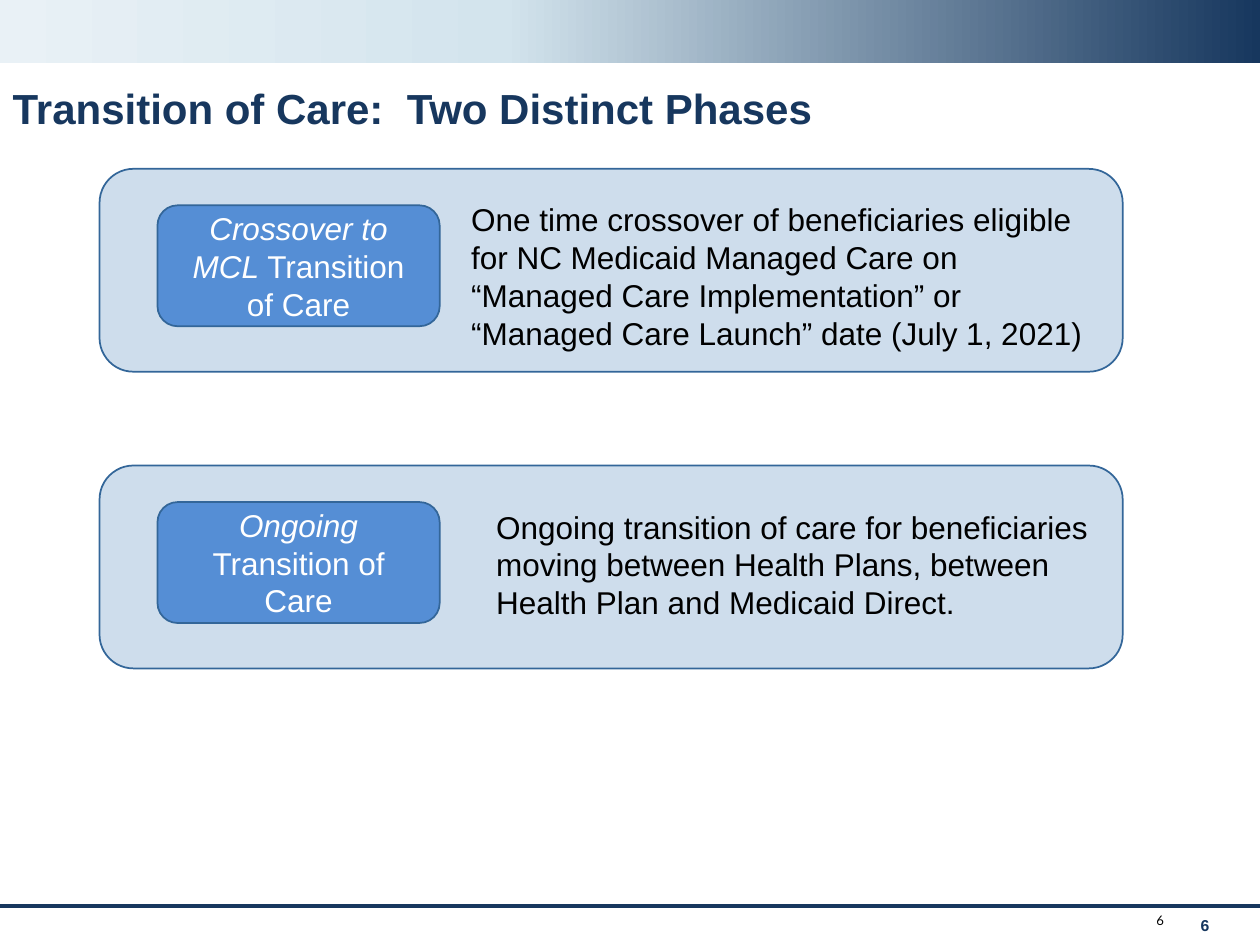
"""Build the slide on the two phases of transition of care."""
from copy import deepcopy

from lxml import etree
from pptx import Presentation
from pptx.dml.color import RGBColor
from pptx.enum.shapes import MSO_CONNECTOR, MSO_SHAPE
from pptx.enum.text import MSO_ANCHOR, MSO_AUTO_SIZE, PP_ALIGN
from pptx.oxml.ns import qn
from pptx.util import Inches, Pt

RECTANGLE, ROUNDED = MSO_SHAPE.RECTANGLE, MSO_SHAPE.ROUNDED_RECTANGLE
STRAIGHT = MSO_CONNECTOR.STRAIGHT
TOP, MIDDLE = MSO_ANCHOR.TOP, MSO_ANCHOR.MIDDLE
LEFT, CENTER = PP_ALIGN.LEFT, PP_ALIGN.CENTER
NO_AUTOFIT = MSO_AUTO_SIZE.NONE
NAVY, BLACK, WHITE = "17375E", "000000", "FFFFFF"
TITLE_ONLY = 5
COLUMNS, ROWS = 100, 75
color = RGBColor.from_string

presentation = Presentation()
presentation.slide_width = Inches(10)
presentation.slide_height = Inches(7.5)
column = presentation.slide_width / COLUMNS
row = presentation.slide_height / ROWS


def grid(left, top, width, height):
    """Turn columns and rows into slide lengths."""
    return [round(left * column), round(top * row), round(width * column), round(height * row)]


def write(shape, runs, size, ink, font="Arial", bold=False, align=LEFT, anchor=TOP):
    """Fill a shape with one paragraph of (text, italic) runs."""
    frame = shape.text_frame
    frame.word_wrap = True
    frame.auto_size = NO_AUTOFIT
    frame.vertical_anchor = anchor
    paragraph = frame.paragraphs[0]
    paragraph.alignment = align
    for text, italic in runs:
        run = paragraph.add_run()
        run.text = text
        run.font.name = font
        run.font.size = Pt(size)
        run.font.bold = bold
        run.font.italic = italic
        run.font.color.rgb = color(ink)
    return paragraph


slide = presentation.slides.add_slide(presentation.slide_layouts[TITLE_ONLY])
shapes = slide.shapes

header = shapes.add_shape(RECTANGLE, *grid(0, 0, COLUMNS, 5))
header.shadow.inherit = False
header.line.fill.background()
header.fill.gradient()
header.fill.gradient_angle = 180
stop_list = header.element.spPr.find(".//" + qn("a:gsLst"))
stop_list.append(deepcopy(stop_list[-1]))
header_stops = [(0, NAVY), (0.6, "D3E4ED"), (1, "E9F1F6")]
for stop, (position, shade) in zip(header.fill.gradient_stops, header_stops):
    stop.position = position
    stop.color.rgb = color(shade)

left, top, width, height = grid(0, 71.9, COLUMNS, 0)
footer_line = shapes.add_connector(STRAIGHT, left, top, left + width, top)
footer_line.line.color.rgb = color(NAVY)
footer_line.line.width = Pt(2.25)
etree.SubElement(footer_line.element.spPr, qn("a:effectLst"))

page_numbers = [
    ((94.3, 72.2, 4.4, 3), 9, "15365E", "Arial", True),
    ((90.8, 71.9, 6.2, 3.1), 7.5, BLACK, "Lato", False),
]
for place, size, ink, font, bold in page_numbers:
    write(shapes.add_textbox(*grid(*place)), [("6", False)], size, ink, font, bold)

title = shapes.title
title.left, title.top, title.width, title.height = grid(0, 6.5, 99.5, 6)
heading = write(title, [("Transition of Care:  Two Distinct Phases", False)], 24, NAVY, bold=True)
heading.line_spacing = 0.9

phases = [
    (
        [("Crossover to MCL ", True), ("Transition of Care", False)],
        "One time crossover of beneficiaries eligible for NC Medicaid Managed Care on "
        "“Managed Care Implementation” or “Managed Care Launch” date (July 1, 2021)",
        (36.4, 15.4, 51.1, 13.1),
    ),
    (
        [("Ongoing", True), (" Transition of Care", False)],
        "Ongoing transition of care for beneficiaries moving between Health Plans, "
        "between Health Plan and Medicaid Direct.",
        (38.4, 39.8, 50, 10.1),
    ),
]
for index, (label_runs, description, description_place) in enumerate(phases):
    panel_top = 13.4 + 23.55 * index
    panel = shapes.add_shape(ROUNDED, *grid(7.9, panel_top, 81.2, 16.1))
    label = shapes.add_shape(ROUNDED, *grid(12.5, panel_top + 2.9, 22.4, 9.6))
    for shape, shade in ((panel, "CEDDEC"), (label, "558ED5")):
        shape.shadow.inherit = False
        shape.fill.solid()
        shape.fill.fore_color.rgb = color(shade)
        shape.line.color.rgb = color("336699")
        shape.line.width = Pt(1)
    write(label, label_runs, 18, WHITE, align=CENTER, anchor=MIDDLE)
    write(shapes.add_textbox(*grid(*description_place)), [(description, False)], 18, BLACK)

presentation.save("out.pptx")
